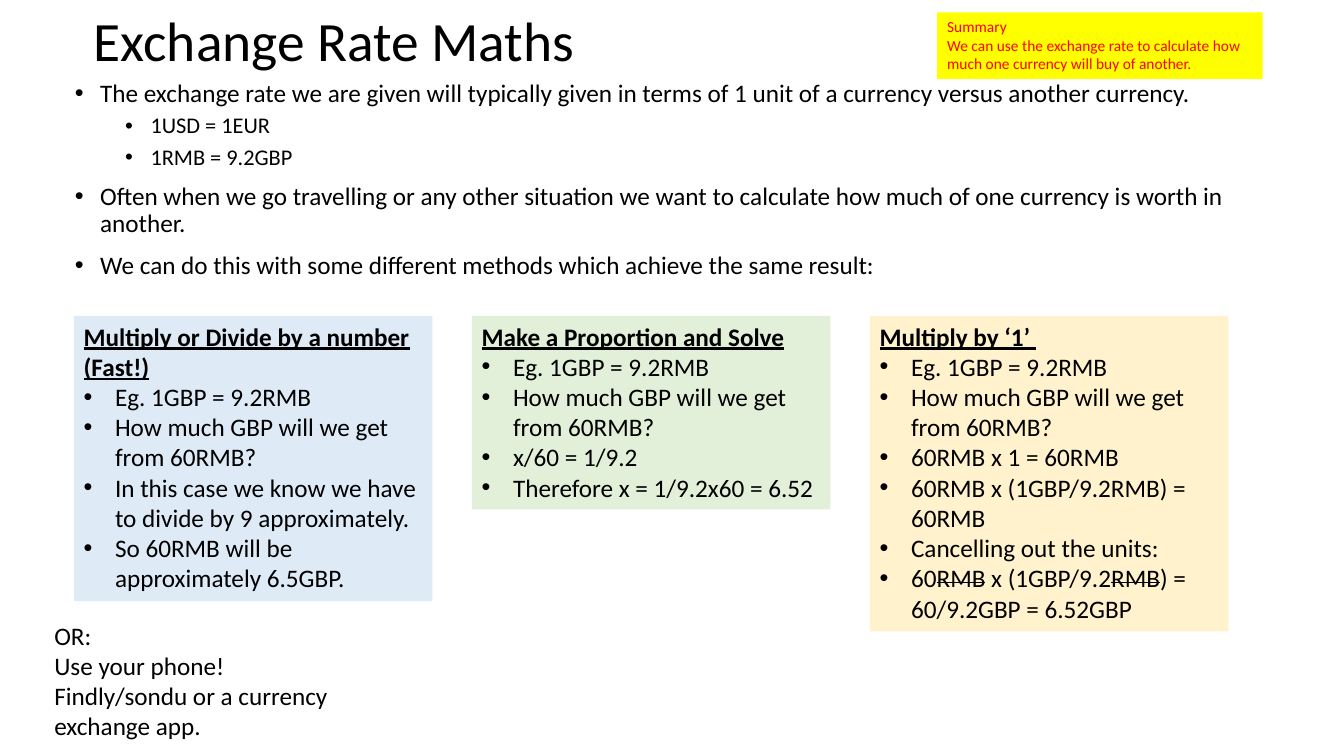
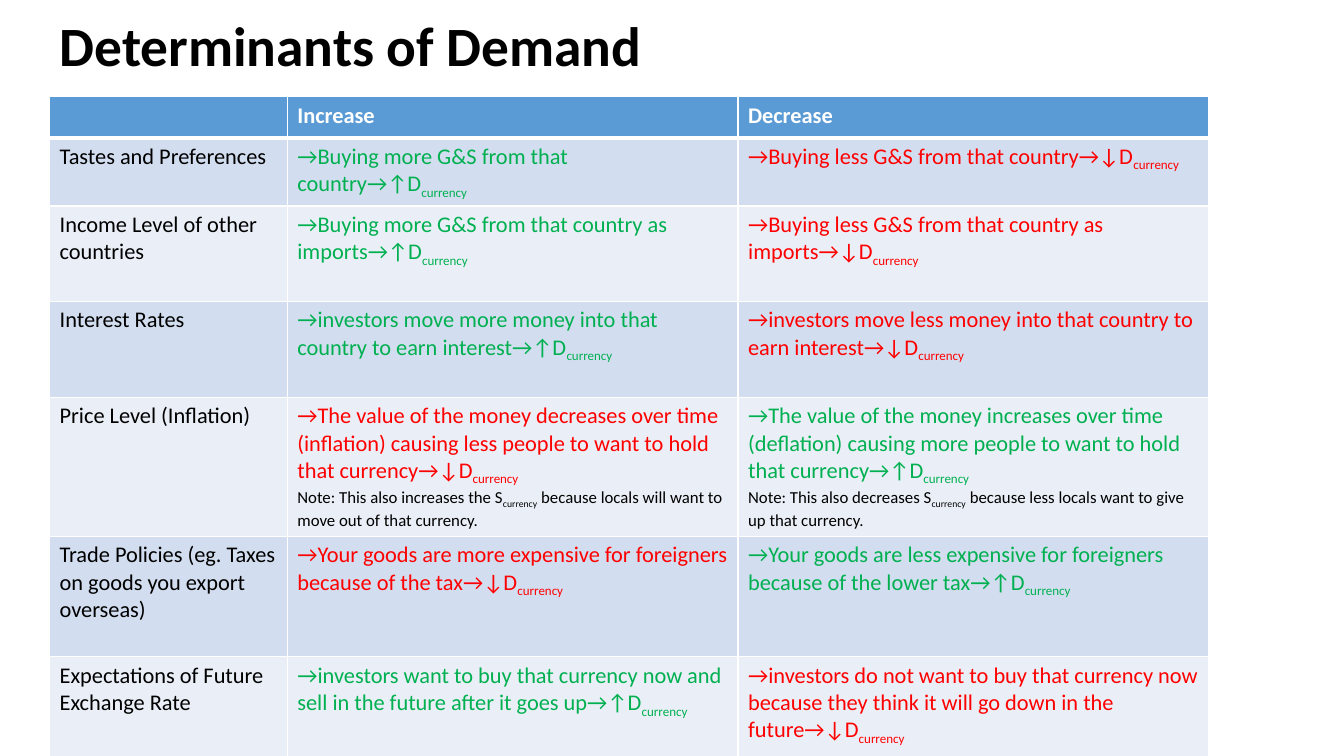
from lxml.etree import SubElement
from pptx import Presentation
from pptx.dml.color import RGBColor
from pptx.enum.shapes import MSO_SHAPE
from pptx.enum.text import MSO_ANCHOR as Anchor, MSO_AUTO_SIZE as AutoSize, PP_ALIGN as Align
from pptx.oxml.ns import qn
from pptx.util import Cm, Pt

BLACK = RGBColor(0x00, 0x00, 0x00)
WHITE = RGBColor(0xFF, 0xFF, 0xFF)
RED = RGBColor(0xFF, 0x00, 0x00)
GREEN = RGBColor(0x00, 0xB0, 0x50)
YELLOW = RGBColor(0xFF, 0xFF, 0x00)
CARD_BLUE = RGBColor(0xDE, 0xEB, 0xF7)
CARD_GREEN = RGBColor(0xE2, 0xF0, 0xD9)
CARD_GOLD = RGBColor(0xFF, 0xF2, 0xCC)
HEADER_BLUE = RGBColor(0x5B, 0x9B, 0xD5)
BAND_DARK = RGBColor(0xD2, 0xDE, 0xEF)
BAND_LIGHT = RGBColor(0xEA, 0xEF, 0xF7)

FONT = "Calibri"
TITLE_AND_BODY, TITLE_ONLY = 1, 5
# Pieces of text between two "~" carry a mark: one of these run attributes
SUBSCRIPT = ("baseline", "-25000")
STRIKE = ("strike", "sngStrike")


class Deck:
    """Holds the style and the slide being built."""

    def __init__(self):
        self.presentation = Presentation()
        self.presentation.slide_width = Cm(33.87)
        self.presentation.slide_height = Cm(19.05)
        self.slide = None

    # Text helpers
    def add_text(self, paragraph, text, size, color=BLACK, bold=False, underline=False, mark=SUBSCRIPT):
        paragraph.alignment = Align.LEFT
        for index, piece in enumerate(text.split("~")):
            if not piece:
                continue
            run = paragraph.add_run()
            run.text = piece
            font = run.font
            font.name, font.size, font.bold, font.underline = FONT, Pt(size), bold, underline
            font.color.rgb = color
            if index % 2:
                run._r.get_or_add_rPr().set(*mark)

    def paragraphs(self, frame, texts):
        """Yield a paragraph for each text, starting with the empty first one."""
        for index, text in enumerate(texts):
            yield (frame.add_paragraph() if index else frame.paragraphs[0]), text

    def bullet(self, paragraph, left, hanging):
        properties = paragraph._p.get_or_add_pPr()
        properties.set("marL", str(Cm(left)))
        properties.set("indent", str(-Cm(hanging)))
        SubElement(properties, qn("a:buFont")).set("typeface", "Arial")
        SubElement(properties, qn("a:buChar")).set("char", "•")

    def place(self, shape, left, top, width, height):
        shape.left, shape.top, shape.width, shape.height = Cm(left), Cm(top), Cm(width), Cm(height)

    # Slide elements
    def add_slide(self, layout, title, left, top, height, bold=False):
        self.slide = self.presentation.slides.add_slide(self.presentation.slide_layouts[layout])
        shape = self.slide.shapes.title
        self.place(shape, left, top, 29.21, height)
        frame = shape.text_frame
        frame.auto_size, frame.vertical_anchor = AutoSize.NONE, Anchor.MIDDLE
        frame.paragraphs[0].line_spacing = 0.9
        self.add_text(frame.paragraphs[0], title, 39.6, bold=bold)

    def body(self, items, left, top, width, height):
        shape = self.slide.placeholders[1]
        self.place(shape, left, top, width, height)
        frame = shape.text_frame
        frame.auto_size = AutoSize.NONE
        for paragraph, (level, text) in self.paragraphs(frame, items):
            paragraph.level = level
            paragraph.line_spacing = 0.9
            paragraph.space_before = Pt(5 if level else 10)
            self.bullet(paragraph, 0.64 + 1.27 * level, 0.64)
            self.add_text(paragraph, text, 16 if level else 18)

    def panel(self, fill, left, top, width, height):
        """Add a filled rectangle and return its text frame."""
        shape = self.slide.shapes.add_shape(
            MSO_SHAPE.RECTANGLE, Cm(left), Cm(top), Cm(width), Cm(height))
        shape.shadow.inherit = False
        shape.fill.solid()
        shape.fill.fore_color.rgb = fill
        shape.line.fill.background()
        return self.fit(shape.text_frame)

    def fit(self, frame):
        frame.word_wrap, frame.auto_size = True, AutoSize.SHAPE_TO_FIT_TEXT
        frame.vertical_anchor = Anchor.TOP
        return frame

    def card(self, heading, steps, fill, left, top, width, height):
        frame = self.panel(fill, left, top, width, height)
        self.add_text(frame.paragraphs[0], heading, 18, bold=True, underline=True)
        for step in steps:
            paragraph = frame.add_paragraph()
            self.bullet(paragraph, 0.79, 0.79)
            self.add_text(paragraph, step, 18, mark=STRIKE)

    def note(self, lines, fill, color, size, left, top, width, height):
        frame = self.panel(fill, left, top, width, height)
        for paragraph, line in self.paragraphs(frame, lines):
            self.add_text(paragraph, line, size, color)

    def text_box(self, lines, left, top, width, height):
        box = self.slide.shapes.add_textbox(Cm(left), Cm(top), Cm(width), Cm(height))
        for paragraph, line in self.paragraphs(self.fit(box.text_frame), lines):
            self.add_text(paragraph, line, 18)

    def cell_borders(self, cell, row):
        properties = cell._tc.get_or_add_tcPr()
        for edge in "LRTB":
            under_header = (row, edge) in ((0, "B"), (1, "T"))
            line = SubElement(properties, qn("a:ln" + edge), w=str(Pt(3 if under_header else 1)))
            fill = SubElement(line, qn("a:solidFill"))
            SubElement(fill, qn("a:srgbClr")).set("val", str(WHITE))

    def table(self, rows, widths, heights, left, top):
        table = self.slide.shapes.add_table(
            len(rows), len(widths), Cm(left), Cm(top),
            Cm(sum(widths)), Cm(sum(heights))).table
        for column, width in zip(table.columns, widths):
            column.width = Cm(width)
        for row, (texts, height) in enumerate(zip(rows, heights)):
            table.rows[row].height = Cm(height)
            band = BAND_DARK if row % 2 else BAND_LIGHT
            for column, text in enumerate(texts):
                cell = table.cell(row, column)
                self.cell_borders(cell, row)
                cell.fill.solid()
                cell.fill.fore_color.rgb = band if row else HEADER_BLUE
                for paragraph, line in self.paragraphs(cell.text_frame, text.split("\n")):
                    self.cell_line(paragraph, line, header=row == 0)

    def cell_line(self, paragraph, line, header):
        """Rising demand is green, falling demand is red, notes are small."""
        if header:
            color = WHITE
        elif "↑" in line:
            color = GREEN
        else:
            color = RED if "↓" in line else BLACK
        self.add_text(paragraph, line, 12 if line.startswith("Note:") else 16, color, bold=header)


def exchange_rate_slide(deck):
    deck.add_slide(TITLE_AND_BODY, "Exchange Rate Maths", 2.11, 0.53, 1.14)
    deck.body([
        (0, "The exchange rate we are given will typically given in terms of 1 unit of a currency versus another currency."),
        (1, "1USD = 1EUR"),
        (1, "1RMB = 9.2GBP"),
        (0, "Often when we go travelling or any other situation we want to calculate how much of one currency is worth in another."),
        (0, "We can do this with some different methods which achieve the same result:"),
    ], 1.63, 1.9, 30.76, 5.44)

    # Three methods, side by side, with the same opening question
    question = ["Eg. 1GBP = 9.2RMB", "How much GBP will we get from 60RMB?"]
    methods = [
        ("Multiply or Divide by a number (Fast!)", CARD_BLUE, 7.19, [
            "In this case we know we have to divide by 9 approximately.",
            "So 60RMB will be approximately 6.5GBP."]),
        ("Make a Proportion and Solve", CARD_GREEN, 4.88, [
            "x/60 = 1/9.2",
            "Therefore x = 1/9.2x60 = 6.52"]),
        ("Multiply by ‘1’ ", CARD_GOLD, 7.95, [
            "60RMB x 1 = 60RMB",
            "60RMB x (1GBP/9.2RMB) = 60RMB",
            "Cancelling out the units:",
            "60~RMB~ x (1GBP/9.2~RMB~) = 60/9.2GBP = 6.52GBP"]),
    ]
    for index, (heading, fill, height, steps) in enumerate(methods):
        deck.card(heading, question + steps, fill, 1.86 + 10.03 * index, 7.96, 9.04, height)

    deck.text_box(["OR:", "Use your phone!", "Findly/sondu or a currency exchange app."],
                  1.12, 15.5, 9.78, 3.33)
    deck.note(["Summary",
               "We can use the exchange rate to calculate how much one currency will buy of another."],
              YELLOW, RED, 11, 23.62, 0.31, 8.2, 1.68)


def demand_slide(deck):
    deck.add_slide(TITLE_ONLY, "Determinants of Demand", 1.25, 0.43, 1.57, bold=True)
    up, down = "→↑D~currency~", "→↓D~currency~"
    rows = [
        ("", "Increase", "Decrease"),
        ("Tastes and Preferences",
         "→Buying more G&S from that country" + up,
         "→Buying less G&S from that country" + down),
        ("Income Level of other countries",
         "→Buying more G&S from that country as imports" + up,
         "→Buying less G&S from that country as imports" + down),
        ("Interest Rates",
         "→investors move more money into that country to earn interest" + up,
         "→investors move less money into that country to earn interest" + down),
        ("Price Level (Inflation)",
         "→The value of the money decreases over time (inflation) causing less people to want to hold that currency"
         + down + "\nNote: This also increases the S~currency~ because locals will want to move out of that currency.",
         "→The value of the money increases over time (deflation) causing more people to want to hold that currency"
         + up + "\nNote: This also decreases S~currency~ because less locals want to give up that currency."),
        ("Trade Policies (eg. Taxes on goods you export overseas)",
         "→Your goods are more expensive for foreigners because of the tax" + down,
         "→Your goods are less expensive for foreigners because of the lower tax" + up),
        ("Expectations of Future Exchange Rate",
         "→investors want to buy that currency now and sell in the future after it goes up" + up,
         "→investors do not want to buy that currency now because they think it will go down in the future" + down),
    ]
    deck.table(rows, widths=[5.99, 11.36, 11.86],
               heights=[1.02, 1.72, 2.41, 2.41, 3.51, 3.03, 2.58], left=1.25, top=2.44)


def main():
    deck = Deck()
    exchange_rate_slide(deck)
    demand_slide(deck)
    deck.presentation.save("out.pptx")


if __name__ == "__main__":
    main()
